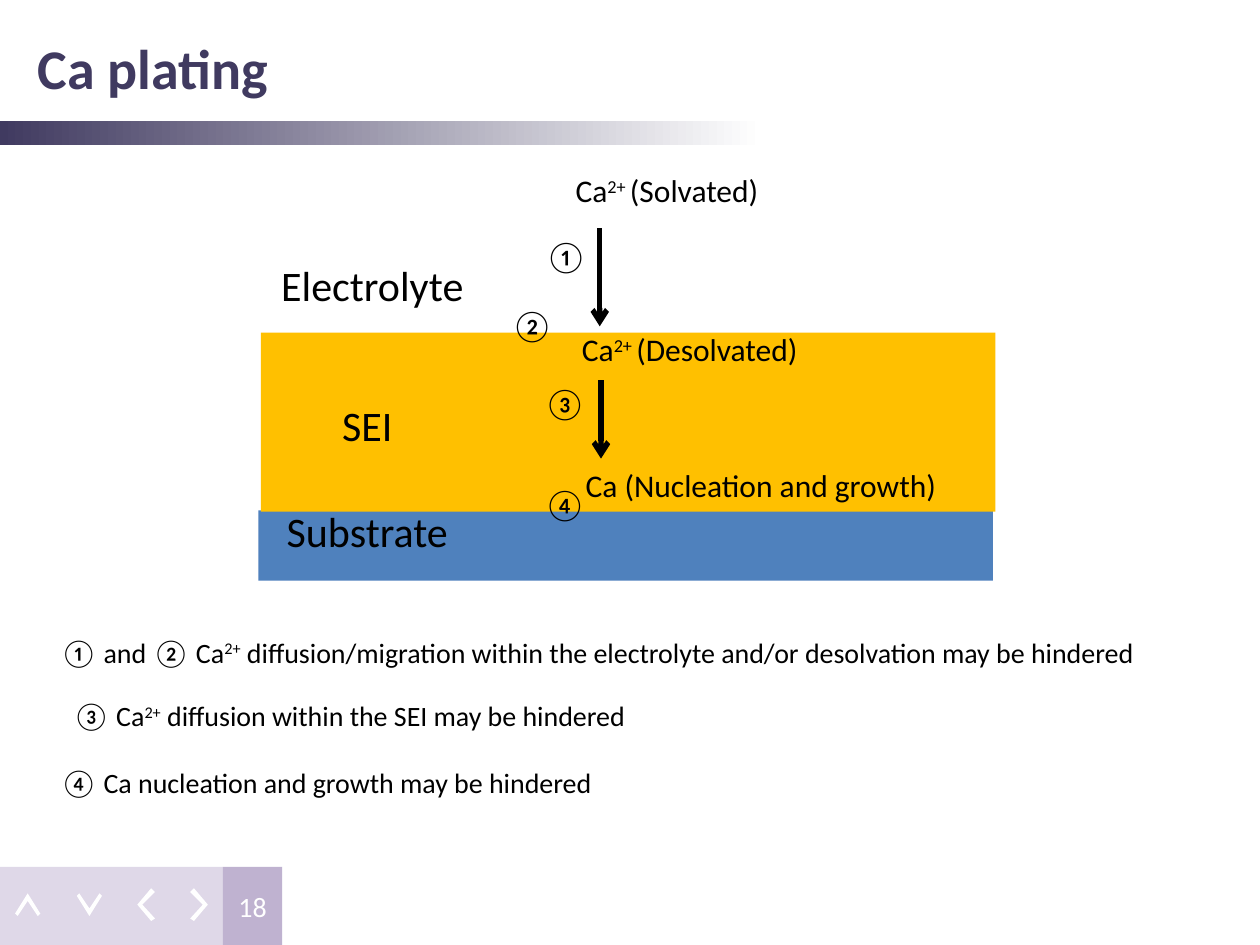
from lxml import etree
from pptx import Presentation, util as u
from pptx.dml.color import RGBColor
from pptx.enum import shapes, text
from pptx.oxml.ns import qn

PX = u.Inches(0.01)
FONT = "Calibri"
INK = RGBColor(0x40, 0x3A, 0x60)
BLACK = RGBColor(0, 0, 0)
WHITE = RGBColor(255, 255, 255)
LILAC = RGBColor(0xDF, 0xD8, 0xE8)
MAUVE = RGBColor(0xBF, 0xB2, 0xD0)
BLUE = RGBColor(0x4F, 0x81, 0xBD)
AMBER = RGBColor(0xFF, 0xC0, 0x00)


def box_emu(*lengths):
    return [v * PX for v in lengths]


def write(p, words, size=18, color=BLACK, bold=False, align=text.PP_ALIGN.LEFT):
    """Fill a paragraph; parts between ^ marks are superscript."""
    p.alignment = align
    for i, part in enumerate(words.split("^")):
        r = p.add_run()
        r.text = part
        r.font.name = FONT
        r.font.size = u.Pt(size)
        r.font.bold = bold
        r.font.color.rgb = color
        if i % 2:
            r.font.superscript = True
            r._r.get_or_add_rPr().set("baseline", "30000")


def add_text(s, box, words, **fmt):
    tf = s.shapes.add_textbox(*box_emu(*box)).text_frame
    tf.word_wrap = True
    write(tf.paragraphs[0], words, **fmt)


def paint(sp, color):
    sp.shadow.inherit = False
    sp.fill.solid()
    sp.fill.fore_color.rgb = color
    sp.line.fill.background()


def add_rect(s, box, color):
    sp = s.shapes.add_shape(shapes.MSO_SHAPE.RECTANGLE, *box_emu(*box))
    paint(sp, color)
    return sp


def add_arrow(s, x, top, bottom):
    line = s.shapes.add_connector(shapes.MSO_CONNECTOR.STRAIGHT,
                                  *box_emu(x, top, x, bottom))
    line.line.color.rgb = BLACK
    line.line.width = u.Pt(3)
    etree.SubElement(line.line._get_or_add_ln(), qn("a:tailEnd"), type="arrow")
    etree.SubElement(line._element.spPr, qn("a:effectLst"))


def add_chevron(s, x, y, points):
    points = [(x + dx, y + dy) for dx, dy in points]
    path = s.shapes.build_freeform(*points[0], scale=PX)
    path.add_line_segments(points[1:], close=True)
    paint(path.convert_to_shape(), WHITE)


def header(s, x, y):
    bar = add_rect(s, (x, y + 96, 651, 19), INK)
    bar.fill.gradient()
    bar.fill.gradient_angle = 0
    for stop, color, position in zip(bar.fill.gradient_stops, (INK, WHITE), (0, 0.93)):
        stop.color.rgb = color
        stop.position = position

    title = s.shapes.title
    title.left, title.top, title.width, title.height = box_emu(x + 20, y + 24, 732, 59)
    title.text_frame.vertical_anchor = text.MSO_ANCHOR.MIDDLE
    write(title.text_frame.paragraphs[0], "Ca plating", size=32, color=INK, bold=True)


def navigation(s, x, y, number):
    add_rect(s, (x, y, 177, 63), LILAC)
    up = [(2, 18), (10, 6), (18, 18), (20, 16), (10, 0), (0, 16)]
    right = [(3, 26), (14, 13), (3, 0), (0, 3), (10, 13), (0, 24)]
    add_chevron(s, x + 12, y + 21, up)
    add_chevron(s, x + 61, y + 21, [(dx, 18 - dy) for dx, dy in up])
    add_chevron(s, x + 109, y + 17, [(14 - dx, dy) for dx, dy in right])
    add_chevron(s, x + 151, y + 17, right)

    tile = add_rect(s, (x + 177, y, 47, 63), MAUVE)
    tile.text_frame.vertical_anchor = text.MSO_ANCHOR.MIDDLE
    write(tile.text_frame.paragraphs[0], number, size=16, color=WHITE,
          align=text.PP_ALIGN.CENTER)


def plating_diagram(s, x, y):
    """Layers, with the four steps from solvated ion to metal."""
    add_rect(s, (x + 24, y + 274, 583, 56), BLUE)
    add_rect(s, (x + 26, y + 133, 583, 142), AMBER)
    for dx, dy, layer in ((4, 70, "Electrolyte"), (0, 181, "SEI"), (0, 265, "Substrate")):
        add_text(s, (x + dx, y + dy, 221, 66), layer, size=24,
                 align=text.PP_ALIGN.CENTER)

    for dx, dy, width, state in ((266, 0, 210, "Ca^2+ ^(Solvated)"),
                                 (271, 126, 237, "Ca^2+ ^(Desolvated)"),
                                 (274, 234, 364, "Ca (Nucleation and growth)")):
        add_text(s, (x + dx, y + dy, width, 53), state)

    add_arrow(s, x + 295, y + 50, y + 128)
    add_arrow(s, x + 296, y + 171, y + 233)
    for dx, dy, step in ((242, 52, "①"), (215, 107, "②"), (241, 169, "③"), (241, 249, "④")):
        add_text(s, (x + dx, y + dy, 64, 53), step)


def explanations(s, x, y):
    tf = s.shapes.add_textbox(*box_emu(x, y, 1012, 199)).text_frame
    tf.word_wrap = True
    tf.margin_top = 59 * PX
    notes = (
        (50, 0, "① and ② Ca^2+^ diffusion/migration within the electrolyte "
                "and/or desolvation may be hindered"),
        (60, 17, "③ Ca^2+^ diffusion within the SEI may be hindered"),
        (50, 19, "④ Ca nucleation and growth may be hindered"),
    )
    for i, (margin, gap, words) in enumerate(notes):
        p = tf.add_paragraph() if i else tf.paragraphs[0]
        p._p.get_or_add_pPr().set("marL", str(margin * PX))
        p.space_before = u.Pt(gap)
        write(p, words, size=16, align=text.PP_ALIGN.JUSTIFY)


def main():
    prs = Presentation()
    prs.slide_width, prs.slide_height = box_emu(1000, 750)
    s = prs.slides.add_slide(prs.slide_layouts[5])
    header(s, 0, 0)
    navigation(s, 0, 688, "18")
    plating_diagram(s, 181, 131)
    explanations(s, -12, 445)
    prs.save("out.pptx")


if __name__ == "__main__":
    main()
